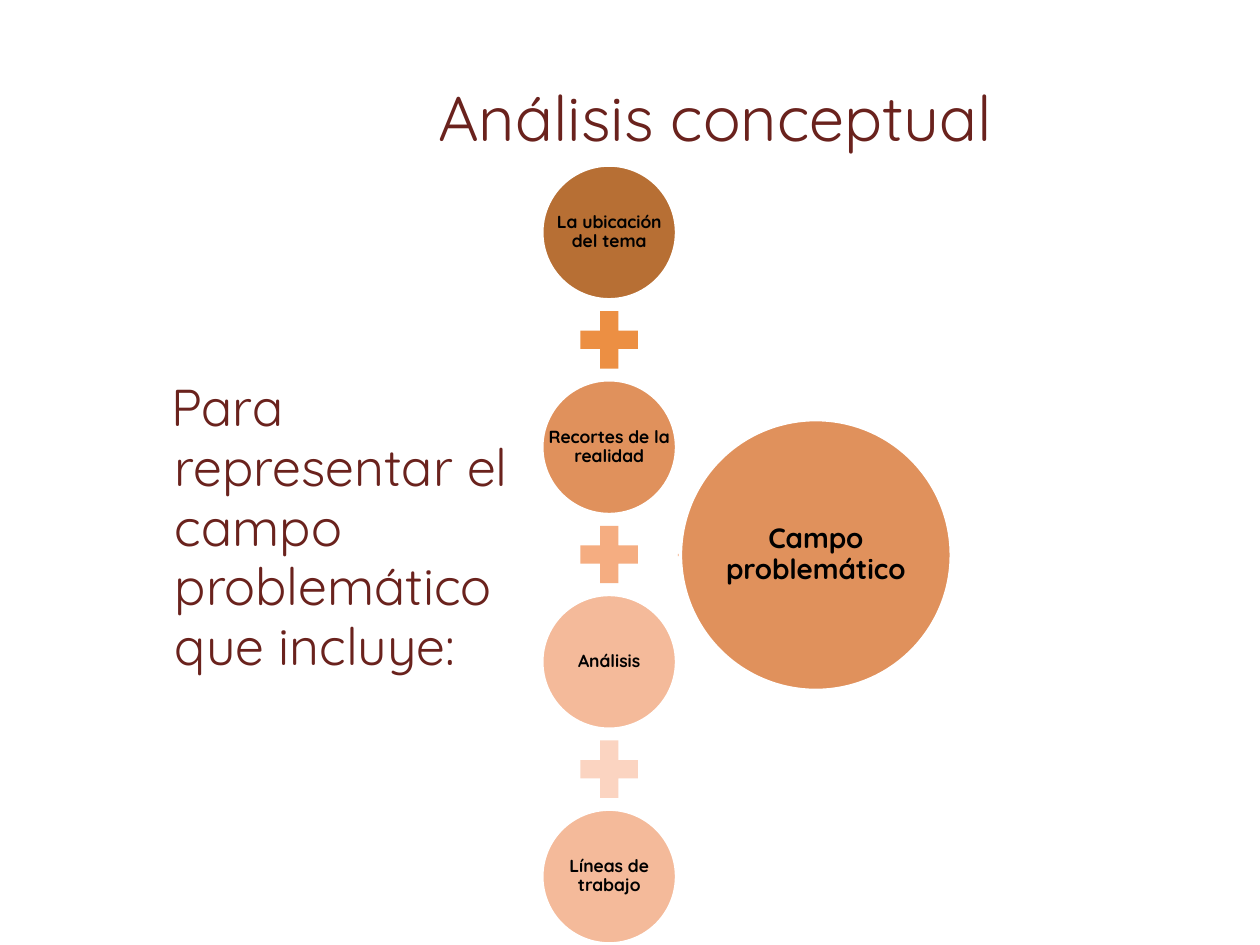
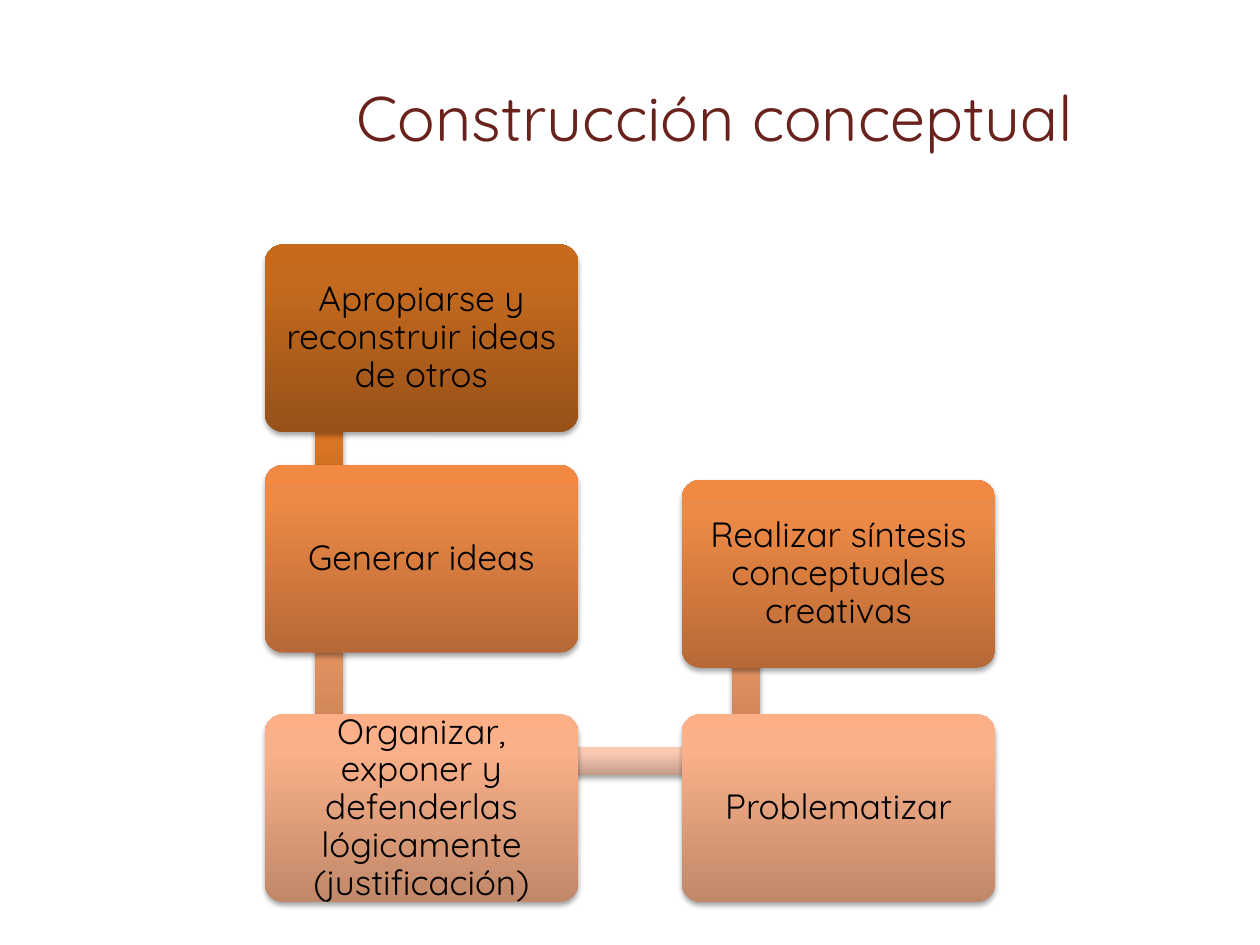
from copy import deepcopy
from itertools import pairwise

from lxml.etree import SubElement
from pptx import Presentation
from pptx.dml.color import RGBColor
from pptx.enum.shapes import MSO_SHAPE
from pptx.enum.text import MSO_ANCHOR, PP_ALIGN
from pptx.oxml.ns import qn
from pptx.util import Inches, Pt

COLS, ROWS = 100, 75
HUES = {
    "title": "6A221D", "ink": "000000", "white": "FFFFFF",
    "brown": "B76F34", "clay": "E0915C", "peach": "F4BA9A",
    "amber": "EC8F43", "coral": "F5AD81", "blush": "FBD4C1",
}
# Stops from bottom to top
FADES = {
    "brown": ("975118", "C46A1F", "C86A1C"),
    "clay": ("B66936", "EC8946", "F18943"),
    "peach": ("C08869", "FAB089", "FDB087"),
    "amber": ("C3691F", "FD8828", "FF8928"),
    "coral": ("C47E53", "FEA46C", "FFA56D"),
    "blush": ("C29C8A", "FCCAB3", "FECAB2"),
}


class Deck:
    """Slide style and current slide; lengths are grid columns and rows."""

    font = "Quicksand"

    def __init__(self):
        self.prs = Presentation()
        self.prs.slide_width, self.prs.slide_height = Inches(10), Inches(7.5)
        self.slide = None

    def span(self, x, y, w, h):
        col = self.prs.slide_width / COLS
        row = self.prs.slide_height / ROWS
        return [round(n) for n in (x * col, y * row, w * col, h * row)]

    def page(self, title):
        self.slide = self.prs.slides.add_slide(self.prs.slide_layouts[6])
        box = self.text((18.5, 3, 76.5, 12.5), title, 36, hue="title")
        box.text_frame.vertical_anchor = MSO_ANCHOR.MIDDLE

    def fill_in(self, shape, words, size, hue="ink", bold=False):
        """Put styled, centred words in the shape."""
        frame = shape.text_frame
        frame.text = words
        frame.word_wrap = True
        para = frame.paragraphs[0]
        para.alignment = PP_ALIGN.CENTER
        font = para.runs[0].font
        font.name, font.size, font.bold = self.font, Pt(size), bold
        font.color.rgb = RGBColor.from_string(HUES[hue])

    def text(self, area, words, size, **look):
        box = self.slide.shapes.add_textbox(*self.span(*area))
        self.fill_in(box, words, size, **look)
        return box

    def label(self, shape, inset):
        """Centre tight text in the shape."""
        frame = shape.text_frame
        frame.vertical_anchor = MSO_ANCHOR.MIDDLE
        frame.margin_left = frame.margin_right = Inches(inset)
        frame.margin_top = frame.margin_bottom = Inches(inset)
        frame.paragraphs[0].line_spacing = 0.9

    def body(self, area, words):
        box = self.text(area, words, 29.6, hue="title")
        para = box.text_frame.paragraphs[0]
        para.alignment = PP_ALIGN.LEFT
        para.line_spacing = 0.96
        props = para._p.get_or_add_pPr()
        props.set("marL", str(Inches(0.38)))
        props.set("indent", str(Inches(-0.03)))

    def shape(self, kind, area, hue=None, adj=()):
        item = self.slide.shapes.add_shape(kind, *self.span(*area))
        item.shadow.inherit = False
        item.line.fill.background()
        for spot, part in enumerate(adj):
            item.adjustments[spot] = part
        if hue:
            item.fill.solid()
            item.fill.fore_color.rgb = RGBColor.from_string(HUES[hue])
        return item

    def disc(self, x, y, size, words, points, hue):
        area = (x, y, size, size)
        ring = self.shape(MSO_SHAPE.OVAL, area, hue)
        ring.line.color.rgb = RGBColor.from_string(HUES["white"])
        ring.line.width = Pt(2)
        self.label(self.text(area, words, points, bold=True), 0.01)

    def glow(self, kind, area, fade, adj=()):
        """Shape with a three-stop fade and a soft shadow below."""
        item = self.shape(kind, area, adj=adj)
        item.fill.gradient()
        item.fill.gradient_angle = 90
        props = item._element.spPr
        stops = props.find(".//" + qn("a:gsLst"))
        stops.append(deepcopy(stops[0]))
        for stop, place, hue in zip(item.fill.gradient_stops, (0, 0.8, 1), FADES[fade]):
            stop.position = place
            stop.color.rgb = RGBColor.from_string(hue)
        shade = SubElement(props.find(qn("a:effectLst")), qn("a:outerShdw"),
                           blurRad=str(Pt(3.1)), dist=str(Pt(1.8)),
                           dir="5400000", rotWithShape="0")
        tone = SubElement(shade, qn("a:srgbClr"), val=HUES["ink"])
        SubElement(tone, qn("a:alpha"), val="35000")
        return item

    def card(self, area, words, fade):
        item = self.glow(MSO_SHAPE.ROUNDED_RECTANGLE, area, fade, (0.1,))
        self.fill_in(item, words, 20)
        self.label(item, 0.04)

    def bar(self, start, end, fade, thick=2.2):
        """Straight band between two points, level or upright."""
        (x1, y1), (x2, y2) = start, end
        wide, tall = abs(x2 - x1), abs(y2 - y1)
        left, top = min(x1, x2), min(y1, y2)
        if wide:
            area = (left, top - thick / 2, wide, thick)
        else:
            area = (left - thick / 2, top, thick, tall)
        self.glow(MSO_SHAPE.RECTANGLE, area, fade)


def sum_page(deck):
    deck.page("Análisis conceptual")
    deck.body((9.1, 29.6, 33.9, 27.6),
              "Para representar el campo problemático que incluye:")
    left, top, step, size, plus = 43, 13.1, 17.04, 10.7, 6.2
    parts = [("La ubicación del tema", "brown"), ("Recortes de la realidad", "clay"),
             ("Análisis", "peach"), ("Líneas de trabajo", "peach")]
    for row, (words, hue) in enumerate(parts):
        deck.disc(left, top + row * step, size, words, 10, hue)
    for row, hue in enumerate(("amber", "coral", "blush")):
        gap = top + row * step + (size + step - plus) / 2
        deck.shape(MSO_SHAPE.MATH_PLUS,
                   (left + (size - plus) / 2, gap, plus, plus), hue)
    deck.shape(MSO_SHAPE.RIGHT_ARROW, (53.8, 43.9, 0.3, 0.3), "coral", (0.6, 0.5))
    deck.disc(54, 33.3, 21.5, "Campo problemático", 16, "clay")


def steps_page(deck):
    deck.page("Construcción conceptual")
    left, right, wide, tall = 21, 54.1, 24.9, 14.9
    steps = [
        (left, 19.4, "Apropiarse y reconstruir ideas de otros", "brown"),
        (left, 36.9, "Generar ideas", "clay"),
        (left, 56.7, "Organizar, exponer y defenderlas lógicamente (justificación)", "peach"),
        (right, 56.7, "Problematizar", "peach"),
        (right, 38.1, "Realizar síntesis conceptuales creativas", "clay"),
    ]
    knots = [(x + 5.1, y + 3.7) for x, y, *_ in steps]
    for (start, end), fade in zip(pairwise(knots), ("amber", "coral", "blush", "coral")):
        deck.bar(start, end, fade)
    for x, y, words, fade in steps:
        deck.card((x, y, wide, tall), words, fade)


def main():
    deck = Deck()
    sum_page(deck)
    steps_page(deck)
    deck.prs.save("out.pptx")


if __name__ == "__main__":
    main()
